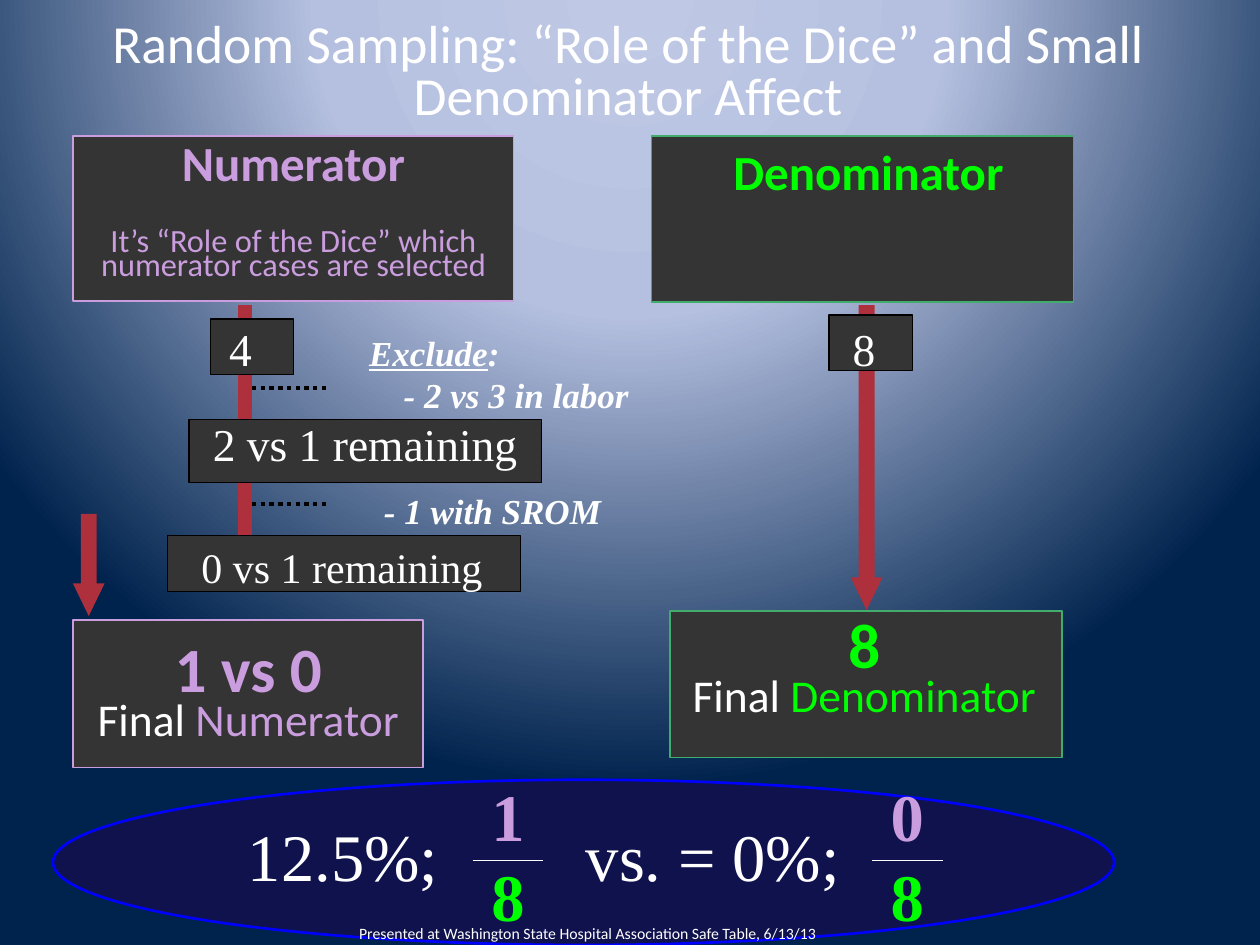
from lxml.etree import SubElement
from pptx import Presentation
from pptx.dml.color import RGBColor
from pptx.enum.dml import MSO_LINE
from pptx.enum.shapes import MSO_CONNECTOR, MSO_SHAPE
from pptx.enum.text import PP_ALIGN
from pptx.oxml.ns import qn
from pptx.util import Cm, Pt

COLORS = {
    "sky": "BFC9E5", "haze": "B5C0E0", "navy": "00234D",
    "panel": "343434", "ellipse": "10124E", "blue": "0000FF",
    "red": "AD303C", "black": "000000", "white": "FFFFFF",
    "lilac": "CA9DDE", "lime": "00FF00", "green": "41AC6C",
}
GRADIENT = [(0, "sky"), (40, "haze"), (100, "navy")]
SANS, SERIF = "Calibri", "Times New Roman"

# preset, (left, top, width, height) in cm, fill, line colour, line width
SHAPES = [
    (MSO_SHAPE.OVAL, (1.07, 15.72, 21.39, 3.33), "ellipse", "blue", 1.5),
    (MSO_SHAPE.DOWN_ARROW, (17.15, 6.15, 0.64, 6.15), "red", None, 0),
    (MSO_SHAPE.DOWN_ARROW, (1.47, 10.36, 0.64, 2.06), "red", None, 0),
    (MSO_SHAPE.RECTANGLE, (4.8, 6.15, 0.28, 5.41), "red", None, 0),
    (MSO_SHAPE.RECTANGLE, (1.47, 2.74, 8.89, 3.33), "panel", "lilac", 0.75),
    (MSO_SHAPE.RECTANGLE, (13.13, 2.74, 8.51, 3.35), "panel", "green", 0.75),
    (MSO_SHAPE.RECTANGLE, (1.47, 12.5, 7.06, 2.97), "panel", "lilac", 0.75),
    (MSO_SHAPE.RECTANGLE, (13.51, 12.32, 7.9, 2.95), "panel", "green", 0.75),
    (MSO_SHAPE.RECTANGLE, (4.24, 6.43, 1.68, 1.12), "panel", "black", 0.75),
    (MSO_SHAPE.RECTANGLE, (16.71, 6.35, 1.68, 1.12), "panel", "black", 0.75),
    (MSO_SHAPE.RECTANGLE, (3.81, 8.46, 7.11, 1.27), "panel", "black", 0.75),
    (MSO_SHAPE.RECTANGLE, (3.38, 10.8, 7.11, 1.12), "panel", "black", 0.75),
]

# text, (left, top, width, height) in cm, size
COUNTS = [
    ("4", (4.37, 6.35, 0.97, 1.37), 26),
    ("8", (16.94, 6.35, 0.97, 1.37), 26),
    ("2 vs 1 remaining", (4.04, 8.26, 6.71, 1.37), 26),
    ("0 vs 1 remaining", (3.81, 10.79, 6.45, 1.27), 24),
    ("12.5%;", (4.75, 16.31, 4.4, 1.88), 38),
    ("vs. = 0%;", (11.56, 16.31, 5.8, 1.88), 38),
]

# heading, label, colour, (left, top, width, height) in cm
RESULTS = [
    ("1 vs 0", "Numerator", "lilac", (1.27, 12.92, 7.47, 2.2)),
    ("8", "Denominator", "lime", (13.69, 12.44, 7.47, 2.2)),
]

FRACTIONS = [("1", "8", 9.53), ("0", "8", 17.58)]
FRACTION_WIDTH = 1.42
EXCLUSION_LINES = [7.82, 10.16]


def paint_background(slide):
    """Fill the slide with a radial gradient centred above its top edge."""
    slide.background.fill.solid()
    properties = slide.element.find(".//" + qn("p:bgPr"))
    properties.remove(properties.find(qn("a:solidFill")))
    gradient = properties.makeelement(qn("a:gradFill"), {"rotWithShape": "1"})
    properties.insert(0, gradient)
    stops = SubElement(gradient, qn("a:gsLst"))
    for position, color in GRADIENT:
        stop = SubElement(stops, qn("a:gs"), pos=str(position * 1000))
        SubElement(stop, qn("a:srgbClr"), val=COLORS[color])
    circle = SubElement(gradient, qn("a:path"), path="circle")
    SubElement(circle, qn("a:fillToRect"), l="50000", t="-80000", r="50000", b="180000")


def add_panel(slide, preset, place, fill, line, width):
    shape = slide.shapes.add_shape(preset, *map(Cm, place))
    shape.shadow.inherit = False
    shape.fill.solid()
    shape.fill.fore_color.rgb = RGBColor.from_string(COLORS[fill])
    if preset == MSO_SHAPE.DOWN_ARROW:
        shape.adjustments[1] = 1.03
    if line:
        shape.line.color.rgb = RGBColor.from_string(COLORS[line])
        shape.line.width = Pt(width)
    else:
        shape.line.fill.background()


def add_rule(slide, left, right, top, color, width, dash=None):
    rule = slide.shapes.add_connector(
        MSO_CONNECTOR.STRAIGHT, Cm(left), Cm(top), Cm(right), Cm(top))
    rule.line.color.rgb = RGBColor.from_string(COLORS[color])
    rule.line.width = Pt(width)
    if dash:
        rule.line.dash_style = dash
    SubElement(rule.element.spPr, qn("a:effectLst"))


def add_text(slide, place, paragraphs, font=SERIF, align=PP_ALIGN.LEFT,
             spacing=None, wrap=False):
    """Each paragraph is (space before, runs); a run is (text, size, colour, styles)."""
    box = slide.shapes.add_textbox(*map(Cm, place))
    frame = box.text_frame
    frame.word_wrap = wrap
    for index, (before, runs) in enumerate(paragraphs):
        para = frame.add_paragraph() if index else frame.paragraphs[0]
        para.alignment = align
        if spacing:
            para.line_spacing = spacing
        if before:
            para.space_before = Pt(before)
        for text, size, color, styles in runs:
            span = para.add_run()
            span.text = text
            span.font.name = font
            span.font.size = Pt(size)
            span.font.color.rgb = RGBColor.from_string(COLORS[color])
            span.font.bold = "b" in styles
            span.font.italic = "i" in styles
            span.font.underline = "u" in styles
    return box


def main():
    deck = Presentation()
    deck.slide_width, deck.slide_height = Cm(25.4), Cm(19.05)
    slide = deck.slides.add_slide(deck.slide_layouts[6])
    paint_background(slide)
    for panel in SHAPES:
        add_panel(slide, *panel)

    centred = {"font": SANS, "align": PP_ALIGN.CENTER, "wrap": True}
    title = "Random Sampling: “Role of the Dice” and Small Denominator Affect"
    add_text(slide, (0.81, 0.33, 23.7, 2.2),
             [(0, [(title, 30.6, "white", "")])], spacing=0.8, **centred)
    reason = "It’s “Role of the Dice” which numerator cases are selected"
    add_text(slide, (1.47, 2.97, 8.89, 2.9),
             [(0, [("Numerator", 28, "lilac", "b")]),
              (26, [(reason, 18.5, "lilac", "")])], spacing=0.6, **centred)
    add_text(slide, (13.34, 2.96, 8.33, 1.04),
             [(0, [("Denominator", 28, "lime", "b")])], spacing=0.8, **centred)
    for heading, label, color, place in RESULTS:
        add_text(slide, place,
                 [(0, [(heading, 36, color, "b")]),
                  (0, [("Final ", 26, "white", ""), (label, 26, color, "")])],
                 spacing=0.75, **centred)

    exclusions = add_text(slide, (7.19, 6.56, 6.15, 1.96), [
        (0, [("Exclude", 20, "white", "biu"), (":", 20, "white", "bi")]),
        (0, [("- 2 vs 3 in labor", 20, "white", "bi")])])
    indented = exclusions.text_frame.paragraphs[1]
    indented._p.get_or_add_pPr().set("marL", str(Cm(0.7)))
    add_text(slide, (7.49, 9.75, 5.46, 1.12),
             [(0, [("- 1 with SROM", 20, "white", "bi")])])
    for top in EXCLUSION_LINES:
        add_rule(slide, 5.08, 6.58, top, "black", 2.5, MSO_LINE.ROUND_DOT)

    for text, place, size in COUNTS:
        add_text(slide, place, [(0, [(text, size, "white", "")])])
    for upper, lower, left in FRACTIONS:
        add_text(slide, (left, 15.5, FRACTION_WIDTH, 3.35),
                 [(0, [(upper, 38, "lilac", "b")]), (0, [(lower, 38, "lime", "b")])],
                 align=PP_ALIGN.CENTER)
        add_rule(slide, left, left + FRACTION_WIDTH, 17.35, "white", 0.5)

    venue = "Presented at Washington State Hospital Association Safe Table, 6/13/13"
    add_text(slide, (6.99, 18.49, 11.86, 0.64),
             [(0, [(venue, 9, "white", "")])], font=SANS, wrap=True)
    deck.save("out.pptx")


if __name__ == "__main__":
    main()
